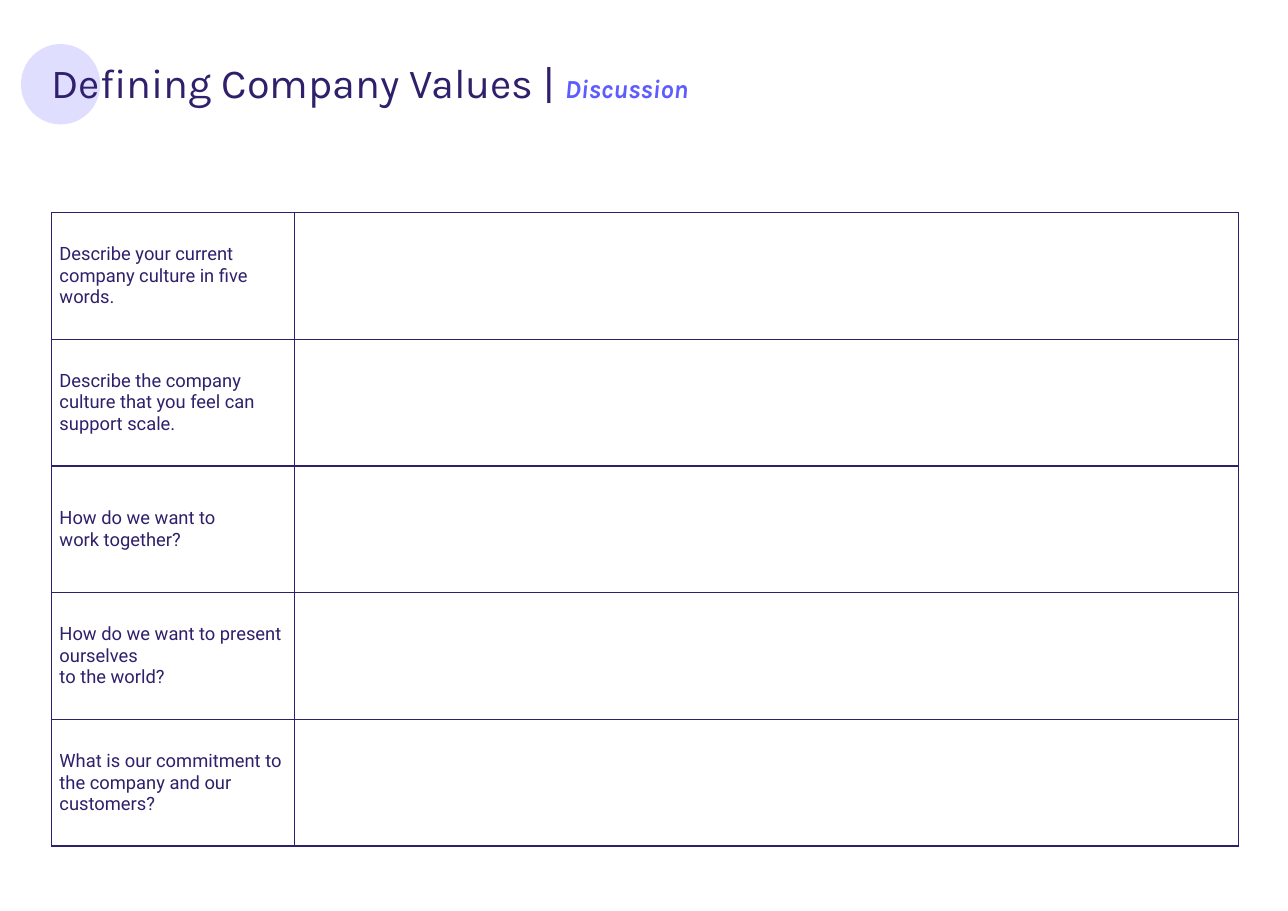
from lxml import etree
from pptx import Presentation
from pptx.dml.color import RGBColor
from pptx.enum.shapes import MSO_SHAPE
from pptx.enum.text import MSO_ANCHOR
from pptx.oxml.ns import qn
from pptx.util import Inches, Pt

OVAL = MSO_SHAPE.OVAL
MIDDLE = MSO_ANCHOR.MIDDLE
INDIGO = RGBColor(0x30, 0x20, 0x6B)
VIOLET = RGBColor(0x5D, 0x5C, 0xFF)
LAVENDER = RGBColor(0xDF, 0xDE, 0xFF)

QUESTIONS = [
    "Describe your current company culture in five words.",
    "Describe the company\vculture that you feel can support scale.",
    "How do we want to\vwork together?",
    "How do we want to present ourselves\vto the world?",
    "What is our commitment to the company and our customers?",
]


class Worksheet:
    heading_font = "Karla"
    body_font = "Roboto"
    body_size = Pt(12)
    padding = Inches(0.07)
    border_width = Pt(1)

    def __init__(self, slide):
        self.slide = slide

    def circle(self, left, top, width, height, color):
        accent = self.slide.shapes.add_shape(
            OVAL, Inches(left), Inches(top), Inches(width), Inches(height))
        accent.shadow.inherit = False
        accent.fill.solid()
        accent.fill.fore_color.rgb = color
        accent.line.fill.background()

    def title(self, left, top, width, height, heading, tag):
        frame = self.slide.shapes.add_textbox(
            Inches(left), Inches(top), Inches(width), Inches(height)).text_frame
        frame.word_wrap = True
        frame.margin_left = frame.margin_right = 0
        frame.margin_top = frame.margin_bottom = 0
        line = frame.paragraphs[0]
        line.line_spacing = 0.9
        for text, size, color, accented in (
                (heading, 27, INDIGO, False), (tag, 17, VIOLET, True)):
            run = line.add_run()
            run.text = text
            run.font.name = self.heading_font
            run.font.size = Pt(size)
            run.font.color.rgb = color
            run.font.bold = run.font.italic = accented

    def question_table(self, left, top, column_widths, row_height, questions):
        table = self.slide.shapes.add_table(
            len(questions), len(column_widths), Inches(left), Inches(top),
            Inches(sum(column_widths)), Inches(row_height * len(questions))).table
        table.first_row = table.horz_banding = False
        for column, width in zip(table.columns, column_widths):
            column.width = Inches(width)
        for row, question in zip(table.rows, questions):
            row.height = Inches(row_height)
            row.cells[0].text = question
            for cell in row.cells:
                self.style_cell(cell)

    def style_cell(self, cell):
        cell.vertical_anchor = MIDDLE
        cell.margin_left = cell.margin_right = self.padding
        cell.margin_top = cell.margin_bottom = self.padding
        font = cell.text_frame.paragraphs[0].font
        font.name = self.body_font
        font.size = self.body_size
        font.color.rgb = INDIGO
        # Borders come before the fill in the cell properties
        properties = cell._tc.get_or_add_tcPr()
        for side in ("a:lnL", "a:lnR", "a:lnT", "a:lnB"):
            border = etree.SubElement(properties, qn(side), w=str(self.border_width))
            paint = etree.SubElement(border, qn("a:solidFill"))
            etree.SubElement(paint, qn("a:srgbClr"), val=str(INDIGO))
        cell.fill.background()


def main():
    deck = Presentation()
    deck.slide_width, deck.slide_height = Inches(11.69), Inches(8.27)
    sheet = Worksheet(deck.slides.add_slide(deck.slide_layouts[6]))

    # Heading with its accent circle
    sheet.circle(0.19, 0.4, 0.72, 0.73, LAVENDER)
    sheet.title(0.47, 0.57, 9.1, 0.84, "Defining Company Values | ", "Discussion")

    # Questions with room for answers
    sheet.question_table(0.47, 1.93, (2.2, 8.57), 1.15, QUESTIONS)

    deck.save("out.pptx")


if __name__ == "__main__":
    main()
